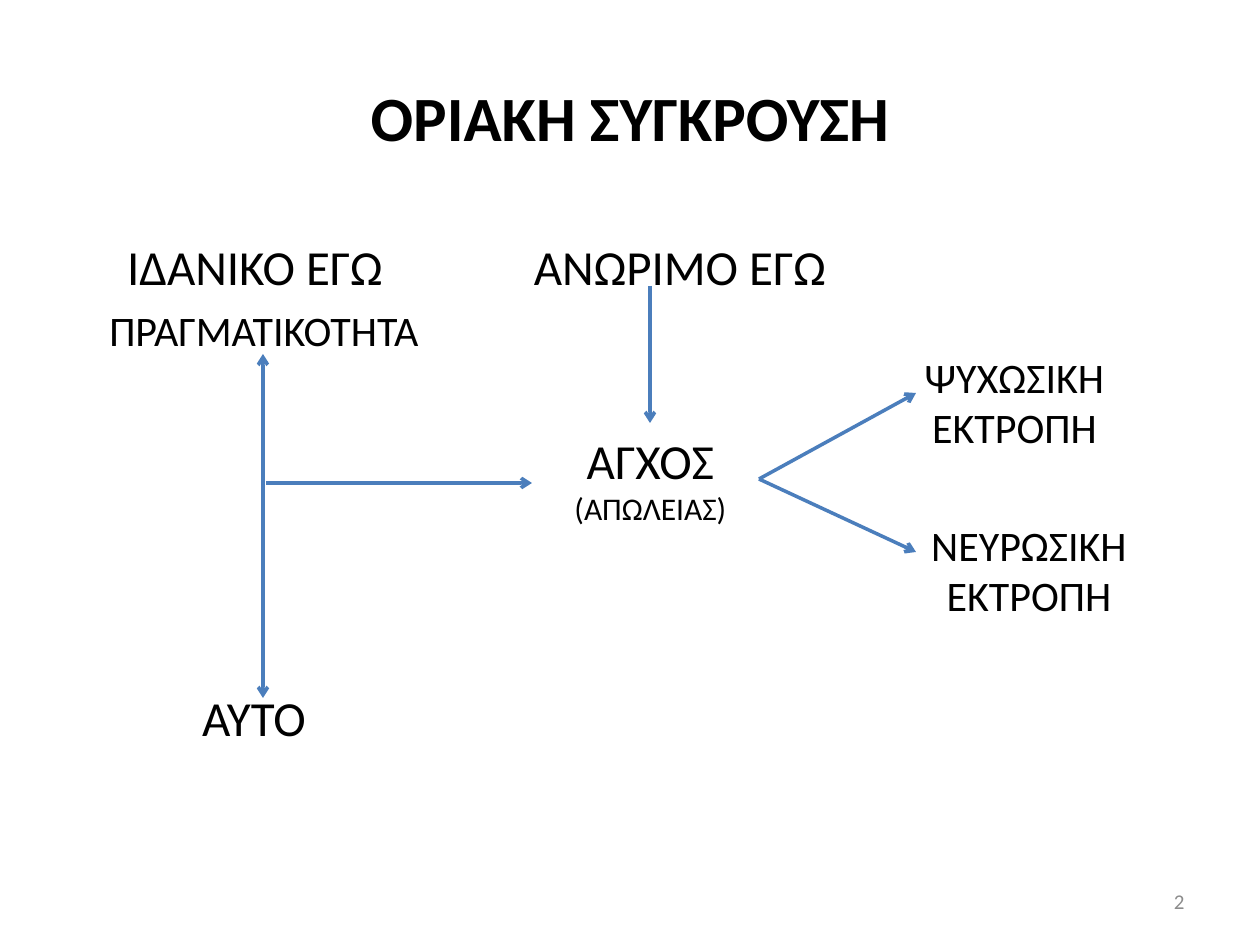
from lxml.etree import SubElement
from pptx import Presentation
from pptx.dml.color import RGBColor
from pptx.enum.shapes import MSO_CONNECTOR
from pptx.enum.text import MSO_ANCHOR, PP_ALIGN
from pptx.oxml.ns import qn
from pptx.util import Emu, Pt

PX_PER_INCH = 126
COLORS = {"text": "000000", "arrow": "4B7EBC", "number": "8C8C8C"}


def px(*lengths):
    return [Emu(round(length * 914400 / PX_PER_INCH)) for length in lengths]


def write(shape, lines, sizes, color="text", align=PP_ALIGN.CENTER, bold=False):
    """Fill a shape with one paragraph per line, each in its own size."""
    frame = shape.text_frame
    frame.word_wrap = True
    frame.vertical_anchor = MSO_ANCHOR.MIDDLE
    frame.text = "\n".join(lines)
    for paragraph, size in zip(frame.paragraphs, sizes):
        paragraph.alignment = align
        font = paragraph.runs[0].font
        font.name = "Calibri"
        font.size = Pt(size)
        font.bold = bold
        font.color.rgb = RGBColor.from_string(COLORS[color])


presentation = Presentation()
presentation.slide_width, presentation.slide_height = px(1260, 945)
slide = presentation.slides.add_slide(presentation.slide_layouts[5])

title = slide.shapes.title
title.left, title.top, title.width, title.height = px(63, 38, 1134, 157)
write(title, ["ΟΡΙΑΚΗ ΣΥΓΚΡΟΥΣΗ"], [36], bold=True)

# Left, top, width, height, lines, point sizes
labels = [
    (85, 230, 340, 72, ["ΙΔΑΝΙΚΟ ΕΓΩ"], [28]),
    (510, 230, 340, 72, ["ΑΝΩΡΙΜΟ ΕΓΩ"], [28]),
    (74, 298, 380, 64, ["ΠΡΑΓΜΑΤΙΚΟΤΗΤΑ"], [24]),
    (154, 681, 200, 72, ["ΑΥΤΟ"], [28]),
    (542, 423, 217, 111, ["ΑΓΧΟΣ", "(ΑΠΩΛΕΙΑΣ)"], [28, 18]),
    (906, 344, 217, 115, ["ΨΥΧΩΣΙΚΗ", "ΕΚΤΡΟΠΗ"], [24, 24]),
    (916, 512, 226, 115, ["ΝΕΥΡΩΣΙΚΗ", "ΕΚΤΡΟΠΗ"], [24, 24]),
]
for left, top, width, height, lines, sizes in labels:
    write(slide.shapes.add_textbox(*px(left, top, width, height)), lines, sizes)

# Start x, start y, end x, end y, ends that carry an arrowhead
arrows = [
    (263, 354, 263, 698, ["a:headEnd", "a:tailEnd"]),
    (266, 483, 532, 483, ["a:tailEnd"]),
    (650, 286, 650, 423, ["a:tailEnd"]),
    (759, 479, 916, 393, ["a:tailEnd"]),
    (759, 479, 916, 552, ["a:tailEnd"]),
]
for start_x, start_y, end_x, end_y, ends in arrows:
    arrow = slide.shapes.add_connector(
        MSO_CONNECTOR.STRAIGHT, *px(start_x, start_y, end_x, end_y))
    arrow.line.color.rgb = RGBColor.from_string(COLORS["arrow"])
    arrow.line.width = Pt(2)
    for end in ends:
        SubElement(arrow.line._get_or_add_ln(), qn(end), type="arrow")
    SubElement(arrow._element.spPr, qn("a:effectLst"))

slide_number = slide.shapes.add_textbox(*px(903, 876, 294, 50))
write(slide_number, ["2"], [12], "number", PP_ALIGN.RIGHT)

presentation.save("out.pptx")
